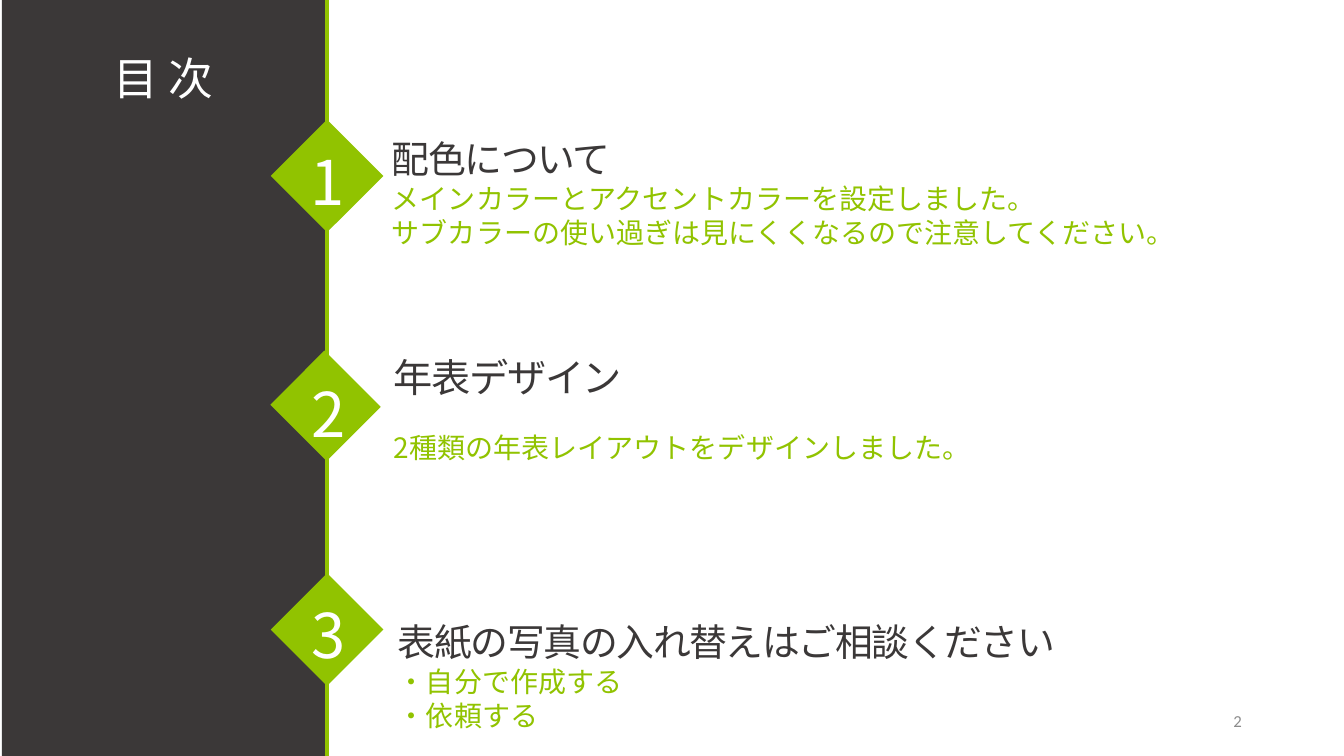
import pptx
import pptx.util
import pptx.dml.color
import pptx.enum.shapes
import pptx.enum.text
import pptx.oxml.ns
from lxml import etree

Pt = pptx.util.Pt
ALIGN = pptx.enum.text.PP_ALIGN
ANCHOR = pptx.enum.text.MSO_ANCHOR
COLORS = {"dark": "3B3838", "green": "91C300", "white": "FFFFFF", "gray": "8C8C8C"}
JP = "Noto Sans CJK JP"
SLIDE_W, SLIDE_H = 960, 540
SPINE_X = 233.3
TILE = 56.9

ITEMS = [
    {"tile": (205.2, 97.2, TILE), "number": (214.6, 95.8), "text": (272.9, 75.6, 580.3, 106.6),
     "heading": "配色について", "size": 27, "leading": 50, "sub_leading": 24.5,
     "lines": ["メインカラーとアクセントカラーを設定しました。",
               "サブカラーの使い過ぎは見にくくなるので注意してください。"]},
    {"tile": (205.2, 261.4, 54.7), "number": (215.3, 261.4), "text": (274.3, 242.6, 431.3, 87.8),
     "heading": "年表デザイン", "size": 28, "leading": 40, "sub_leading": 45,
     "lines": ["2種類の年表レイアウトをデザインしました。"]},
    {"tile": (205.2, 421.2, TILE), "number": (215.3, 419.8), "text": (277.2, 425.5, 499, 101.5),
     "heading": "表紙の写真の入れ替えはご相談ください", "size": 27, "leading": 45, "sub_leading": 24.5,
     "lines": ["・自分で作成する", "・依頼する"]},
]


def rgb(name):
    return pptx.dml.color.RGBColor.from_string(COLORS[name])


def format_paragraph(p, size, color, font=JP, leading=None, tracking=None):
    if leading:
        p.line_spacing = Pt(leading)
    for r in p.runs:
        r.font.size = Pt(size)
        r.font.color.rgb = rgb(color)
        r.font.name = font
        rPr = r.font._element
        etree.SubElement(rPr, pptx.oxml.ns.qn("a:ea")).set("typeface", font)
        if tracking:
            rPr.set("spc", str(tracking))


def add_text(s, box, text, wrap=False):
    tf = s.shapes.add_textbox(*map(Pt, box)).text_frame
    tf.word_wrap = wrap
    tf.text = text
    return tf


def add_block(s, box, color, rotation=0):
    sp = s.shapes.add_shape(pptx.enum.shapes.MSO_SHAPE.RECTANGLE, *map(Pt, box))
    sp.shadow.inherit = False
    sp.fill.solid()
    sp.fill.fore_color.rgb = rgb(color)
    sp.line.fill.background()
    sp.rotation = rotation


def add_sidebar(s, left, top, width, height):
    add_block(s, (left, top, width, height), "dark")
    spine = s.shapes.add_connector(pptx.enum.shapes.MSO_CONNECTOR.STRAIGHT,
                                   Pt(SPINE_X), Pt(top), Pt(SPINE_X), Pt(top + height))
    spine.line.color.rgb = rgb("green")
    spine.line.width = Pt(3)
    etree.SubElement(spine._element.spPr, pptx.oxml.ns.qn("a:effectLst"))

    title = s.shapes.title
    title.left, title.top, title.width, title.height = map(Pt, (left, top + 31.7, width, 48.2))
    tf = title.text_frame
    tf.text = "目 次"
    tf.vertical_anchor = ANCHOR.MIDDLE
    tf.paragraphs[0].alignment = ALIGN.CENTER
    format_paragraph(tf.paragraphs[0], 32, "white")


def add_item(s, number, item):
    left, top, width = item["tile"]
    add_block(s, (left, top, width, TILE), "green", rotation=315)
    tf = add_text(s, (*item["number"], 36.7, 60.5), str(number))
    format_paragraph(tf.paragraphs[0], 44, "white", leading=56)

    tf = add_text(s, item["text"], item["heading"])
    format_paragraph(tf.paragraphs[0], item["size"], "dark", leading=item["leading"], tracking=-100)
    for line in item["lines"]:
        p = tf.add_paragraph()
        p.text = line
        format_paragraph(p, 20, "green", leading=item["sub_leading"])


def add_page_number(s, left, top, width, height):
    tf = add_text(s, (left, top, width, height), "2", wrap=True)
    tf.vertical_anchor = ANCHOR.MIDDLE
    tf.paragraphs[0].alignment = ALIGN.RIGHT
    format_paragraph(tf.paragraphs[0], 12, "gray", font="Calibri")


def main():
    prs = pptx.Presentation()
    prs.slide_width, prs.slide_height = Pt(SLIDE_W), Pt(SLIDE_H)
    s = prs.slides.add_slide(prs.slide_layouts.get_by_name("Title Only"))
    add_sidebar(s, 1.4, 0, 231, SLIDE_H)
    s.shapes._spTree.append(s.shapes.title._element)
    for number, item in enumerate(ITEMS, 1):
        add_item(s, number, item)
    add_page_number(s, 678.2, 500.4, 216, 28.8)
    prs.save("out.pptx")


if __name__ == "__main__":
    main()
